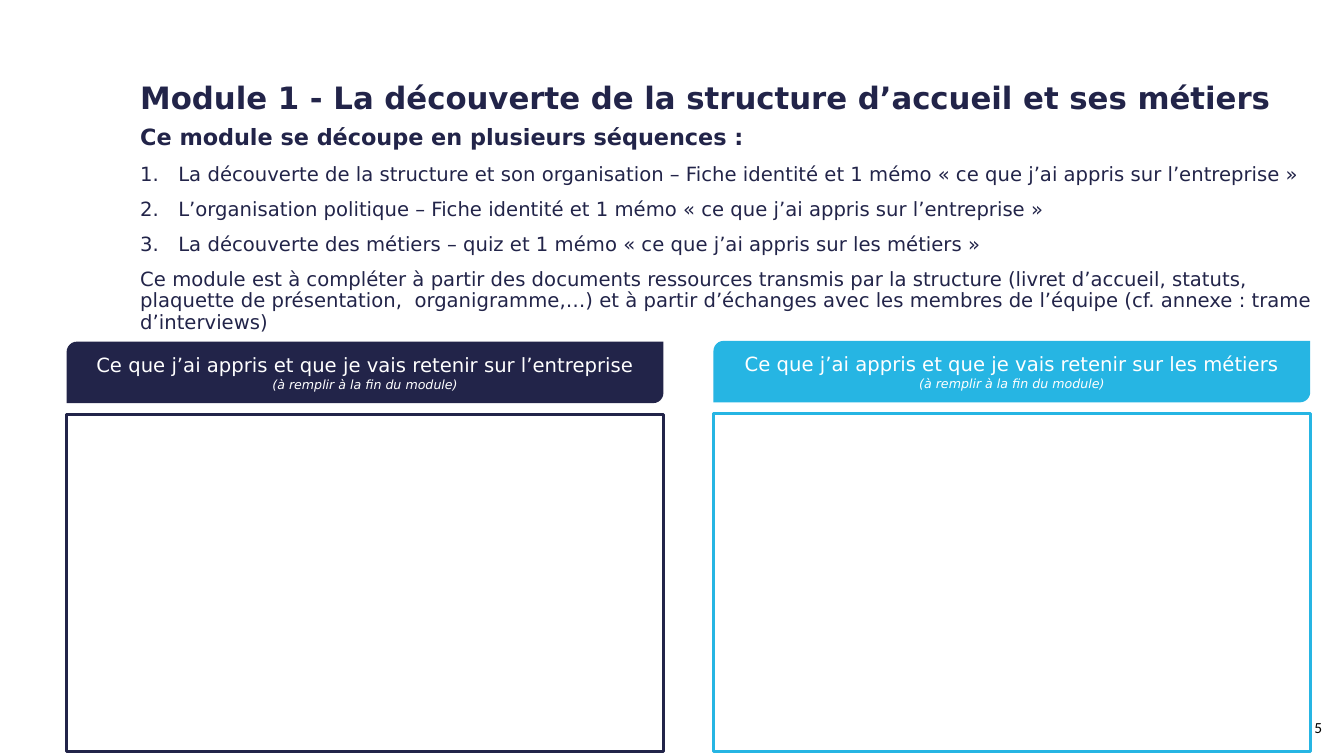
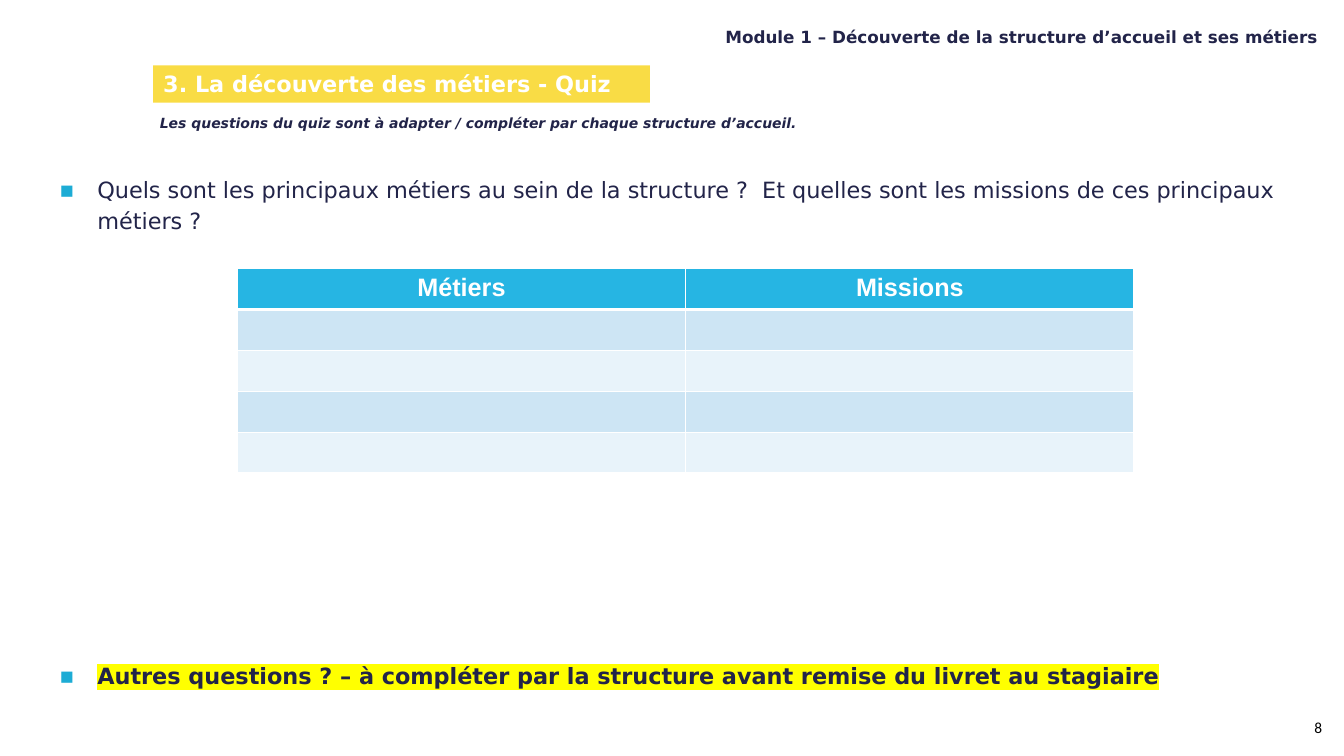
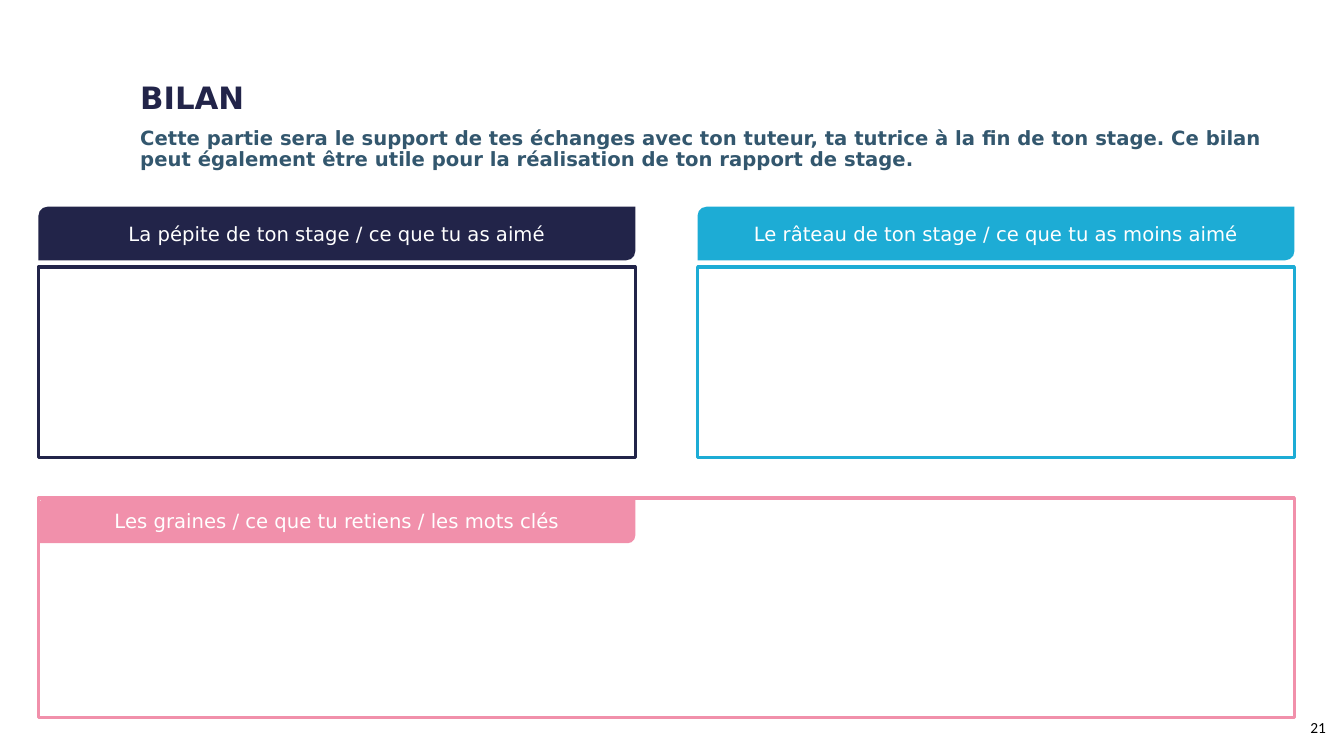
from dataclasses import dataclass

from lxml import etree
from pptx import Presentation
from pptx.dml.color import RGBColor
from pptx.enum.shapes import MSO_SHAPE
from pptx.enum.text import MSO_ANCHOR, MSO_AUTO_SIZE, PP_ALIGN
from pptx.oxml.ns import qn
from pptx.util import Cm, Pt

RECT = MSO_SHAPE.RECTANGLE
LEAF = MSO_SHAPE.ROUND_2_DIAG_RECTANGLE
LEFT, CENTER = PP_ALIGN.LEFT, PP_ALIGN.CENTER
TOP, MIDDLE = MSO_ANCHOR.TOP, MSO_ANCHOR.MIDDLE
FIXED = MSO_AUTO_SIZE.NONE


@dataclass(frozen=True)
class Theme:
    navy: str = "222449"
    sky: str = "26B5E3"
    cyan: str = "1DACD5"
    pink: str = "F190AB"
    gold: str = "F9DC45"
    slate: str = "33576E"
    white: str = "FFFFFF"
    black: str = "000000"
    mark: str = "FFFF00"
    bands: tuple = ("CDE5F4", "E8F3FA")
    font: str = "DejaVu Sans"
    title: int = 22
    lead: int = 16
    text: int = 14
    head: int = 12
    page: int = 11
    note: int = 10
    hint: int = 9
    cell: int = 18


T = Theme()
rgb = RGBColor.from_string


def place(shape, left, top, width, height, anchor=TOP):
    """Move a shape, in centimetres, and fix how its text sits."""
    shape.left, shape.top = Cm(left), Cm(top)
    shape.width, shape.height = Cm(width), Cm(height)
    frame = shape.text_frame
    frame.word_wrap, frame.auto_size = True, FIXED
    frame.vertical_anchor = anchor
    return frame


def write(frame, text, size=T.text, color=T.navy, bold=False, italic=False,
          font=T.font, align=LEFT, line=1.0, before=0, bullet=None, mark=None):
    """Add one paragraph; bullet is "1." for numbers or a bullet sign."""
    para = frame.add_paragraph() if frame.text else frame.paragraphs[0]
    props = para._p.get_or_add_pPr()
    dent = Cm(0.96) if bullet else 0
    props.set("marL", str(dent))
    props.set("indent", str(-dent))
    if bullet == "1.":
        etree.SubElement(props, qn("a:buAutoNum"), type="arabicPeriod")
    elif bullet:
        tint = etree.SubElement(props, qn("a:buClr"))
        etree.SubElement(tint, qn("a:srgbClr"), val=T.cyan)
        etree.SubElement(props, qn("a:buFont"), typeface=T.font)
        etree.SubElement(props, qn("a:buChar"), char=bullet)
    else:
        etree.SubElement(props, qn("a:buNone"))
    para.alignment, para.line_spacing = align, line
    para.space_before, para.space_after = Pt(before), Pt(0)
    run = para.add_run()
    run.text = text
    run.font.size, run.font.bold, run.font.italic = Pt(size), bold, italic
    run.font.color.rgb = rgb(color)
    if mark:
        glow = etree.SubElement(run._r.get_or_add_rPr(), qn("a:highlight"))
        etree.SubElement(glow, qn("a:srgbClr"), val=mark)
    run.font.name = font


deck = Presentation()
deck.slide_width, deck.slide_height = Cm(33.87), Cm(19.05)
slides = []
for page in ("5", "8", "21"):
    slide = deck.slides.add_slide(deck.slide_layouts[1])
    slides.append(slide)
    foot = place(slide.shapes.add_textbox(0, 0, 0, 0), 32.72, 17.98, 1, 0.74)
    write(foot, page, size=T.page, color=T.black, font="Calibri", align=CENTER)
intro, quiz, recap = slides

for slide, text in (
    (intro, "Module 1 - La découverte de la structure d’accueil et ses métiers"),
    (recap, "BILAN"),
):
    title = place(slide.shapes.title, 3.28, 1.96, 30, 1.2)
    write(title, text, size=T.title, bold=True, line=0.9)

# Module introduction
body = place(intro.placeholders[1], 3.28, 3.05, 30.58, 4.75)
write(body, "Ce module se découpe en plusieurs séquences :",
      size=T.lead, bold=True, line=0.9)
for step in (
    "La découverte de la structure et son organisation – Fiche identité et 1 mémo « ce que j’ai appris sur l’entreprise »",
    "L’organisation politique – Fiche identité et 1 mémo « ce que j’ai appris sur l’entreprise »",
    "La découverte des métiers – quiz et 1 mémo « ce que j’ai appris sur les métiers »",
):
    write(body, step, line=0.9, before=10, bullet="1.")
write(body, "Ce module est à compléter à partir des documents ressources transmis "
      "par la structure (livret d’accueil, statuts, plaquette de présentation,  "
      "organigramme,…) et à partir d’échanges avec les membres de l’équipe "
      "(cf. annexe : trame d’interviews)", line=0.9, before=10)

# Quiz
title = place(quiz.shapes.title, 3.86, 1.65, 12.52, 0.94)
quiz.shapes.title.fill.solid()
quiz.shapes.title.fill.fore_color.rgb = rgb(T.gold)
write(title, "3. La découverte des métiers - Quiz",
      size=T.lead, color=T.white, bold=True)
head = place(quiz.shapes.add_textbox(0, 0, 0, 0), 18.03, 0.61, 15.7, 1.02)
write(head, "Module 1 – Découverte de la structure d’accueil et ses métiers",
      size=T.head, bold=True, line=0.9)
note = place(quiz.shapes.add_textbox(0, 0, 0, 0), 3.78, 2.82, 22.94, 0.76)
write(note, "Les questions du quiz sont à adapter / compléter par chaque structure d’accueil.",
      size=T.note, bold=True, italic=True, line=0.9)
body = place(quiz.placeholders[1], 1.24, 4.22, 31.95, 14.35)
write(body, "Quels sont les principaux métiers au sein de la structure ?  "
      "Et quelles sont les missions de ces principaux métiers ?",
      size=T.lead, line=1.15, bullet="▪")
write(body, "Autres questions ? – à compléter par la structure avant remise du livret au stagiaire",
      size=T.lead, bold=True, line=0.9, before=308, bullet="▪", mark=T.mark)

heads = ("Métiers", "Missions")
grid = quiz.shapes.add_table(5, 2, Cm(5.98), Cm(6.77), Cm(22.6), Cm(5.15)).table
grid.first_row = grid.horz_banding = False
for row, band in enumerate(grid.rows):
    for col, cell in enumerate(band.cells):
        cell.fill.solid()
        cell.fill.fore_color.rgb = rgb(T.bands[(row - 1) % 2] if row else T.sky)
        for spot, side in enumerate(("lnL", "lnR", "lnT", "lnB")):
            thick = (row, side) in ((0, "lnB"), (1, "lnT"))
            edge = etree.Element(qn("a:" + side), w=str(Pt(3 if thick else 1)))
            ink = etree.SubElement(edge, qn("a:solidFill"))
            etree.SubElement(ink, qn("a:srgbClr"), val=T.white)
            cell._tc.get_or_add_tcPr().insert(spot, edge)
        if row == 0:
            write(cell.text_frame, heads[col], size=T.cell, color=T.white,
                  bold=True, font="Arial", align=CENTER)

# Review
body = place(recap.placeholders[1], 3.28, 3.12, 29.67, 1.55)
write(body, "Cette partie sera le support de tes échanges avec ton tuteur, ta tutrice "
      "à la fin de ton stage. Ce bilan peut également être utile pour la réalisation "
      "de ton rapport de stage.", color=T.slate, bold=True, line=0.9)

# Answer cards: slide, colour, left, label top and height, box top, width, height
WIDE = 15.04
hint = "(à remplir à la fin du module)"
for slide, color, left, top, tall, low, width, height, label, sub in (
    (intro, T.navy, 1.68, 8.61, 1.55, 10.44, WIDE, 8.5,
     "Ce que j’ai appris et que je vais retenir sur l’entreprise", hint),
    (intro, T.sky, 17.98, 8.59, 1.55, 10.41, WIDE, 8.53,
     "Ce que j’ai appris et que je vais retenir sur les métiers", hint),
    (recap, T.navy, 0.97, 5.21, 1.35, 6.73, WIDE, 4.8,
     "La pépite de ton stage / ce que tu as aimé", None),
    (recap, T.cyan, 17.58, 5.21, 1.35, 6.73, WIDE, 4.8,
     "Le râteau de ton stage / ce que tu as moins aimé", None),
    (recap, T.pink, 0.97, 12.55, 1.14, 12.55, 31.65, 5.54,
     "Les graines / ce que tu retiens / les mots clés", None),
):
    box = slide.shapes.add_shape(RECT, Cm(left), Cm(low), Cm(width), Cm(height))
    box.shadow.inherit = False
    box.fill.solid()
    box.fill.fore_color.rgb = rgb(T.white)
    box.line.color.rgb, box.line.width = rgb(color), Pt(2.25)
    tab = slide.shapes.add_shape(LEAF, 0, 0, 0, 0)
    tab.shadow.inherit = False
    tab.fill.solid()
    tab.fill.fore_color.rgb = rgb(color)
    tab.line.fill.background()
    frame = place(tab, left, top, WIDE, tall, MIDDLE)
    write(frame, label, color=T.white, align=CENTER)
    if sub:
        write(frame, sub, size=T.hint, color=T.white, italic=True, align=CENTER)

deck.save("out.pptx")
